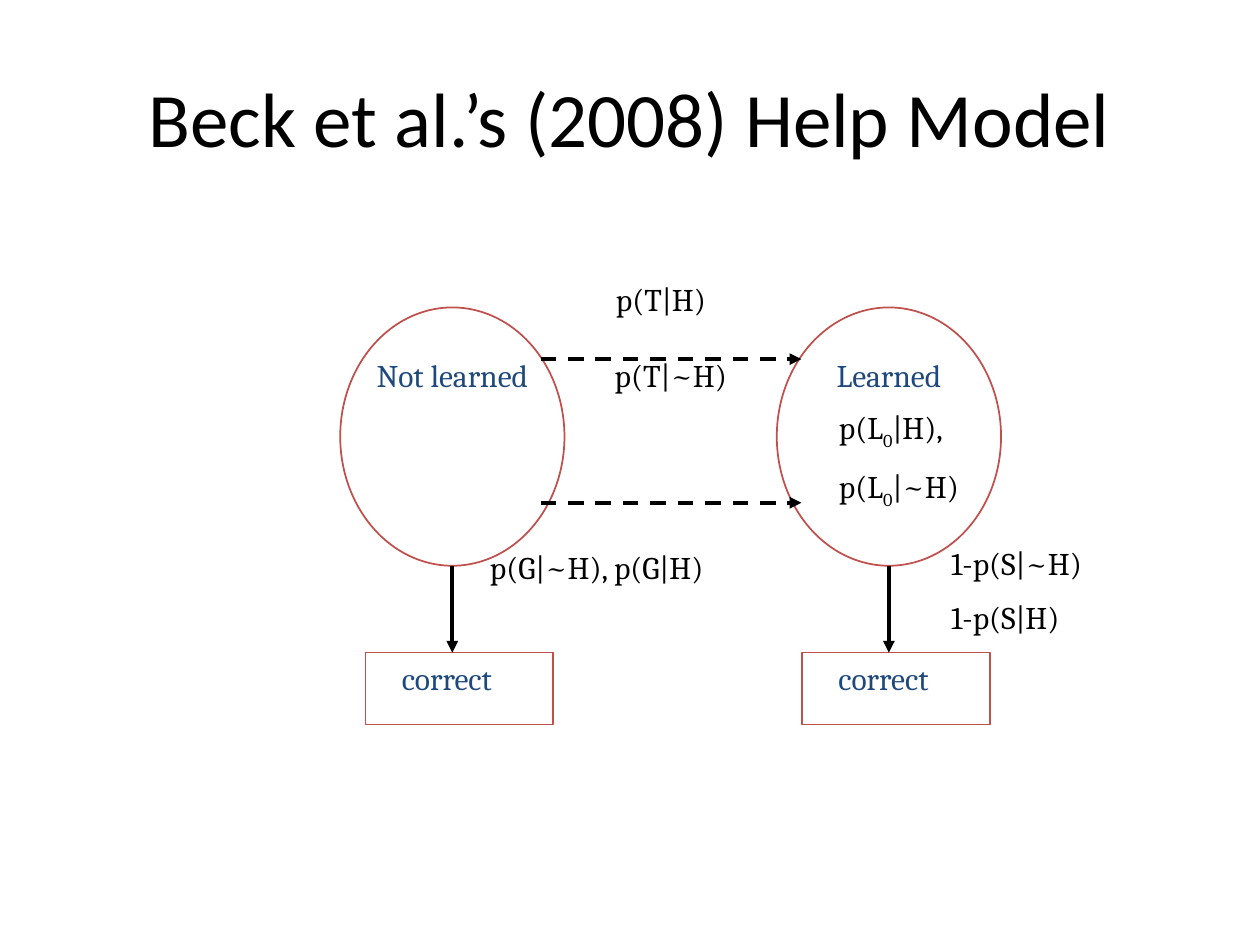
from dataclasses import dataclass

from lxml.etree import SubElement
from pptx import Presentation
from pptx.dml.color import RGBColor as Rgb
from pptx.enum.dml import MSO_LINE as Dash
from pptx.enum.shapes import MSO_CONNECTOR as Link, MSO_SHAPE as Preset
from pptx.enum.text import MSO_ANCHOR as Anchor, PP_ALIGN as Align
from pptx.oxml.ns import qn
from pptx.util import Inches, Pt


@dataclass(frozen=True)
class Theme:
    ink: Rgb = Rgb(0x00, 0x00, 0x00)
    label: Rgb = Rgb(0x1F, 0x49, 0x7D)
    outline: Rgb = Rgb(0xC0, 0x50, 0x4D)
    title_font: str = "Calibri"
    body_font: str = "Cambria"
    title_size: float = 44
    body_size: float = 18
    paragraph_gap: float = 9
    outline_width: float = 1
    arrow_width: float = 2.25


THEME = Theme()
WIDTH, HEIGHT = Inches(10), Inches(7.5)
COLUMNS, ROWS = 100, 75
STATE_SPACING = 34.65


def col(count):
    return round(WIDTH * count / COLUMNS)


def row(count):
    return round(HEIGHT * count / ROWS)


def place(left, top, width, height):
    return col(left), row(top), col(width), row(height)


def write(slide, lines, area, font=THEME.body_font, size=THEME.body_size,
          color=THEME.ink, align=Align.LEFT, anchor=Anchor.TOP):
    frame = slide.shapes.add_textbox(*place(*area)).text_frame
    frame.word_wrap = True
    frame.vertical_anchor = anchor
    for index, line in enumerate(lines):
        paragraph = frame.paragraphs[0]
        if index:
            paragraph = frame.add_paragraph()
            paragraph.space_before = Pt(THEME.paragraph_gap)
        paragraph.alignment = align
        for part, words in enumerate(line.split("_")):
            run = paragraph.add_run()
            run.text = words
            run.font.name = font
            run.font.size = Pt(size)
            run.font.color.rgb = color
            if part % 2:
                run.font._element.set("baseline", "-25000")


def outline(slide, preset, area):
    node = slide.shapes.add_shape(preset, *place(*area))
    node.shadow.inherit = False
    node.fill.background()
    node.line.color.rgb = THEME.outline
    node.line.width = Pt(THEME.outline_width)


def arrow(slide, start, end, dash=None):
    link = slide.shapes.add_connector(
        Link.STRAIGHT, col(start[0]), row(start[1]), col(end[0]), row(end[1]))
    link.line.color.rgb = THEME.ink
    link.line.width = Pt(THEME.arrow_width)
    if dash:
        link.line.dash_style = dash
    properties = link._element.spPr
    SubElement(properties.find(qn("a:ln")), qn("a:tailEnd"), type="triangle")
    SubElement(properties, qn("a:effectLst"))


def state(slide, name, left):
    center = left + 8.9
    outline(slide, Preset.OVAL, (left, 24.4, 17.8, 20.5))
    write(slide, [name], (center - 10.9, 27.8, 21.8, 5.5),
          color=THEME.label, align=Align.CENTER)
    outline(slide, Preset.RECTANGLE, (left + 2, 51.8, 14.9, 5.7))
    write(slide, ["correct"], (left + 3.9, 51.8, 13.9, 5.5), color=THEME.label)
    arrow(slide, (center, 44.9), (center, 51.8))


def main():
    deck = Presentation()
    deck.slide_width, deck.slide_height = WIDTH, HEIGHT
    slide = deck.slides.add_slide(deck.slide_layouts[6])

    write(slide, ["Beck et al.’s (2008) Help Model"], (5, 3, 90, 12.5),
          font=THEME.title_font, size=THEME.title_size,
          align=Align.CENTER, anchor=Anchor.MIDDLE)

    for index, name in enumerate(["Not learned", "Learned"]):
        state(slide, name, 27 + index * STATE_SPACING)

    for level in (28.5, 39.9):
        arrow(slide, (42.9, level), (63.6, level), dash=Dash.DASH)

    probabilities = [
        (["p(T|H)"], (47.9, 21.7, 11.9, 5.5)),
        (["p(T|~H)"], (47.8, 27.8, 14.9, 5.5)),
        (["p(G|~H), p(G|H)"], (37.9, 43, 19.8, 9.7)),
        (["1-p(S|~H)", "1-p(S|H)"], (74.5, 42.7, 18.8, 11.8)),
        (["p(L_0_|H),", "p(L_0_|~H)"], (65.6, 31.9, 18.3, 11.8)),
    ]
    for lines, area in probabilities:
        write(slide, lines, area)

    deck.save("out.pptx")


if __name__ == "__main__":
    main()
